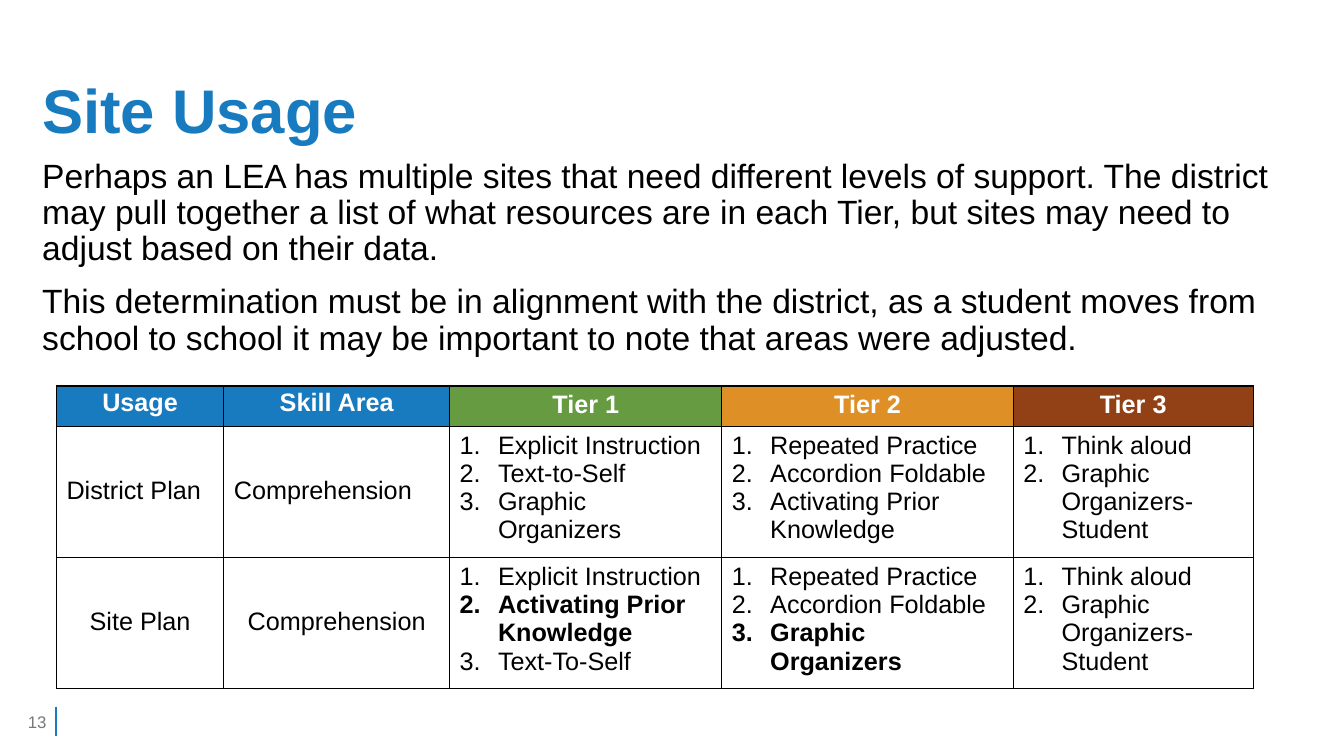
import pptx
import pptx.util
import pptx.dml.color
import pptx.enum.shapes
import pptx.enum.text
import pptx.oxml
import pptx.oxml.ns
from lxml import etree

Inches = pptx.util.Inches
Pt = pptx.util.Pt
RGBColor = pptx.dml.color.RGBColor
Align = pptx.enum.text.PP_ALIGN
Anchor = pptx.enum.text.MSO_ANCHOR
qn = pptx.oxml.ns.qn

BLUE = RGBColor(0x18, 0x7B, 0xC0)
GREEN = RGBColor(0x66, 0x9B, 0x41)
ORANGE = RGBColor(0xDE, 0x90, 0x27)
BROWN = RGBColor(0x91, 0x41, 0x15)
GRAY = RGBColor(0x78, 0x78, 0x78)
BLACK = RGBColor(0, 0, 0)
WHITE = RGBColor(255, 255, 255)

TIGHT = {"line_spacing": 0.9}
CENTERED = {"alignment": Align.CENTER}
TABLE_FONT = {"size": Pt(18)}
HEADER_FONT = {"size": Pt(18), "bold": True}

BODY = [
    "Perhaps an LEA has multiple sites that need different levels of support. "
    "The district may pull together a list of what resources are in each Tier, "
    "but sites may need to adjust based on their data.",
    "This determination must be in alignment with the district, as a student moves "
    "from school to school it may be important to note that areas were adjusted.",
]
HEADERS = [
    ("Usage", BLUE, {**TIGHT, **CENTERED}),
    ("Skill Area", BLUE, {**TIGHT, **CENTERED}),
    ("Tier 1", GREEN, CENTERED),
    ("Tier 2", ORANGE, CENTERED),
    ("Tier 3", BROWN, CENTERED),
]
TIER_3 = ["Think aloud", "Graphic Organizers-Student"]
PLANS = [
    ("District Plan", TIGHT, [
        ["Explicit Instruction", "Text-to-Self", "Graphic Organizers"],
        ["Repeated Practice", "Accordion Foldable", "Activating Prior Knowledge"],
        TIER_3,
    ], set()),
    ("Site Plan", {**TIGHT, **CENTERED}, [
        ["Explicit Instruction", "Activating Prior Knowledge", "Text-To-Self"],
        ["Repeated Practice", "Accordion Foldable", "Graphic Organizers"],
        TIER_3,
    ], {"Activating Prior Knowledge", "Graphic Organizers"}),
]
COLUMN_WIDTHS = [1.66, 2.24, 2.7, 2.89, 2.38]
ROW_HEIGHTS = [0.38, 1.22, 1.22]


def apply_format(target, values):
    for name, value in values.items():
        setattr(target, name, value)


def write_para(para, text, color, font, layout):
    apply_format(para, layout)
    span = para.add_run()
    span.text = text
    apply_format(span.font, {"name": "Arial", **font})
    span.font.color.rgb = color


def write_paras(frame, texts, color, font, layout, gap=0):
    for index, text in enumerate(texts):
        para = frame.add_paragraph() if index else frame.paragraphs[0]
        spacing = {"space_before": Pt(gap)} if index and gap else {}
        write_para(para, text, color, font, {**layout, **spacing})


def add_text(page, place, texts, color, font, layout, anchor=Anchor.MIDDLE, gap=0):
    box = page.shapes.add_textbox(*map(Inches, place))
    apply_format(box.text_frame, {"word_wrap": True, "vertical_anchor": anchor})
    write_paras(box.text_frame, texts, color, font, layout, gap)


def add_rule(page, start, end):
    straight = pptx.enum.shapes.MSO_CONNECTOR.STRAIGHT
    rule = page.shapes.add_connector(straight, *map(Inches, start + end))
    rule.line.color.rgb = BLUE
    rule.line.width = Pt(1.5)
    etree.SubElement(rule._element.spPr, qn("a:effectLst"))


def style_cell(cell, fill, anchor=Anchor.TOP):
    properties = cell._tc.get_or_add_tcPr()
    for side in ("lnL", "lnR", "lnT", "lnB"):
        border = etree.SubElement(properties, qn("a:" + side), w=str(Pt(1)))
        solid = etree.SubElement(border, qn("a:solidFill"))
        etree.SubElement(solid, qn("a:srgbClr"), val=str(BLACK))
    cell.fill.solid()
    cell.fill.fore_color.rgb = fill
    cell.vertical_anchor = anchor


def write_numbered(frame, items, bold_items):
    for index, item in enumerate(items):
        para = frame.add_paragraph() if index else frame.paragraphs[0]
        properties = para._p.get_or_add_pPr()
        indent = Inches(0.38)
        properties.set("marL", str(indent))
        properties.set("indent", str(-indent))
        etree.SubElement(properties, qn("a:buFont"), typeface="+mj-lt")
        etree.SubElement(properties, qn("a:buAutoNum"), type="arabicPeriod")
        write_para(para, item, BLACK, {**TABLE_FONT, "bold": item in bold_items}, {})


def add_plan_table(page):
    place = map(Inches, (0.56, 3.83, sum(COLUMN_WIDTHS), sum(ROW_HEIGHTS)))
    table = page.shapes.add_table(len(ROW_HEIGHTS), len(COLUMN_WIDTHS), *place).table
    apply_format(table, {"first_row": False, "horz_banding": False})
    for column, width in zip(table.columns, COLUMN_WIDTHS):
        column.width = Inches(width)
    for row, height in zip(table.rows, ROW_HEIGHTS):
        row.height = Inches(height)
    for column, (title, fill, layout) in enumerate(HEADERS):
        cell = table.cell(0, column)
        style_cell(cell, fill)
        write_paras(cell.text_frame, [title], WHITE, HEADER_FONT, layout)
    for row, (plan, layout, tiers, bold_items) in enumerate(PLANS, start=1):
        for column, label in enumerate((plan, "Comprehension")):
            cell = table.cell(row, column)
            style_cell(cell, WHITE, Anchor.MIDDLE)
            write_paras(cell.text_frame, [label], BLACK, TABLE_FONT, layout)
        for column, items in enumerate(tiers, start=2):
            cell = table.cell(row, column)
            style_cell(cell, WHITE)
            write_numbered(cell.text_frame, items, bold_items)


def main():
    deck = pptx.Presentation()
    apply_format(deck, {"slide_width": Inches(13.33), "slide_height": Inches(7.5)})
    page = deck.slides.add_slide(deck.slide_layouts[6])
    add_rule(page, (0.56, 7.01), (0.56, 7.3))
    add_text(page, (0.32, 0.4, 12.69, 1.45), ["Site Usage"], BLUE,
             {"size": Pt(44), "bold": True}, TIGHT)
    add_text(page, (0.32, 1.53, 12.39, 2.22), BODY, BLACK,
             {"size": Pt(24)}, TIGHT, Anchor.TOP, gap=12)
    add_text(page, (0, 6.96, 0.56, 0.4), ["13"], GRAY,
             {"size": Pt(12)}, {"alignment": Align.RIGHT})
    add_plan_table(page)
    deck.save("out.pptx")


if __name__ == "__main__":
    main()
